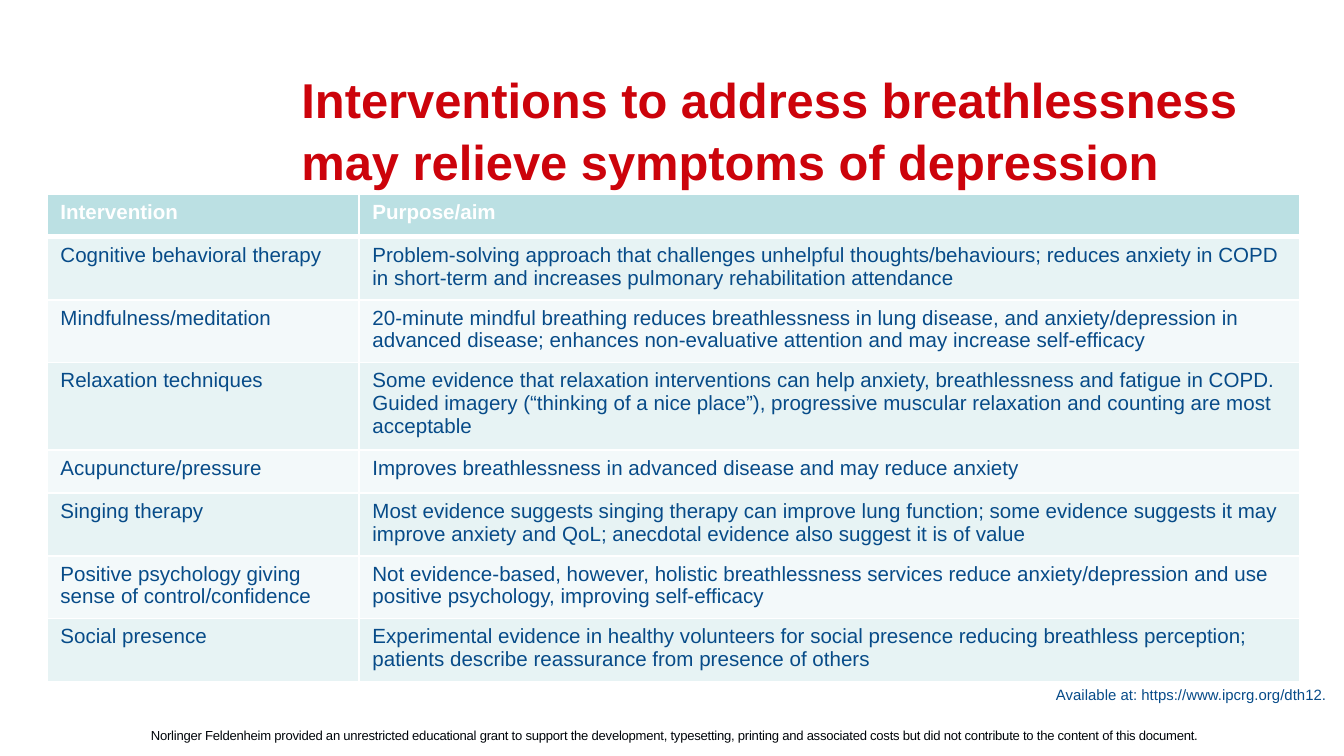
"""Build a slide listing interventions that address breathlessness."""
from dataclasses import dataclass

import lxml.etree
import pptx
import pptx.dml.color
import pptx.enum.text
import pptx.oxml.ns
import pptx.util

EMU_PER_PX = 914400 / 134.4
FONT = "Arial"
WHITE, NAVY, RED, INK = "FFFFFF", "074B88", "CC030B", "00050A"
HEADER_FILL, BAND_FILLS = "BBE0E3", ("E7F3F4", "F3F9FA")
COLUMN_WIDTHS = (312, 941)
HEADER_HEIGHT = 43


@dataclass(frozen=True)
class Frame:
    left: int
    top: int
    width: int
    height: int


@dataclass(frozen=True)
class Style:
    size: float
    colour: str
    bold: bool = False


@dataclass(frozen=True)
class Intervention:
    name: str
    aim: str
    height: int = 54


INTERVENTIONS = (
    Intervention(
        "Cognitive behavioral therapy",
        "Problem-solving approach that challenges unhelpful thoughts/behaviours; reduces anxiety "
        "in COPD in short-term and increases pulmonary rehabilitation attendance"),
    Intervention(
        "Mindfulness/meditation",
        "20-minute mindful breathing reduces breathlessness in lung disease, and anxiety/depression "
        "in advanced disease; enhances non-evaluative attention and may increase self-efficacy"),
    Intervention(
        "Relaxation techniques",
        "Some evidence that relaxation interventions can help anxiety, breathlessness and fatigue "
        "in COPD. Guided imagery (“thinking of a nice place”), progressive muscular relaxation and "
        "counting are most acceptable", 75),
    Intervention(
        "Acupuncture/pressure",
        "Improves breathlessness in advanced disease and may reduce anxiety", 43),
    Intervention(
        "Singing therapy",
        "Most evidence suggests singing therapy can improve lung function; some evidence suggests "
        "it may improve anxiety and QoL; anecdotal evidence also suggest it is of value"),
    Intervention(
        "Positive psychology giving sense of control/confidence",
        "Not evidence-based, however, holistic breathlessness services reduce anxiety/depression "
        "and use positive psychology, improving self-efficacy"),
    Intervention(
        "Social presence",
        "Experimental evidence in healthy volunteers for social presence reducing breathless "
        "perception; patients describe reassurance from presence of others"),
)


def px(length: int) -> pptx.util.Emu:
    return pptx.util.Emu(round(length * EMU_PER_PX))


def rgb(colour: str) -> pptx.dml.color.RGBColor:
    return pptx.dml.color.RGBColor.from_string(colour)


def place(shape, frame: Frame) -> None:
    shape.left, shape.top = px(frame.left), px(frame.top)
    shape.width, shape.height = px(frame.width), px(frame.height)


def write(text_frame, text: str, style: Style):
    para = text_frame.paragraphs[0]
    para.add_run().text = text
    para.font.name = FONT
    para.font.size = pptx.util.Pt(style.size)
    para.font.bold = style.bold
    para.font.color.rgb = rgb(style.colour)
    return para


def add_title(page, frame: Frame, text: str) -> None:
    title = page.shapes.title
    place(title, frame)
    title.text_frame.auto_size = pptx.enum.text.MSO_AUTO_SIZE.NONE
    title.text_frame.vertical_anchor = pptx.enum.text.MSO_ANCHOR.TOP
    para = write(title.text_frame, text, Style(26.2, RED, True))
    para.alignment = pptx.enum.text.PP_ALIGN.LEFT
    para.line_spacing = 1.05


def add_text(page, frame: Frame, text: str, style: Style):
    box = page.shapes.add_textbox(*map(px, (frame.left, frame.top, frame.width, frame.height)))
    box.text_frame.word_wrap = True
    write(box.text_frame, text, style)
    return box


def add_border(cell, side: str, points: int) -> None:
    properties = cell._tc.get_or_add_tcPr()
    qn = pptx.oxml.ns.qn
    line = lxml.etree.SubElement(properties, qn(f"a:ln{side}"), w=str(pptx.util.Pt(points)))
    fill = lxml.etree.SubElement(line, qn("a:solidFill"))
    lxml.etree.SubElement(fill, qn("a:srgbClr"), val=WHITE)


def fill_row(table, index: int, texts: tuple[str, str], style: Style, fill: str) -> None:
    for cell, text in zip(table.rows[index].cells, texts):
        write(cell.text_frame, text, style)
        for side in "LRTB":
            under_header = (index, side) in ((0, "B"), (1, "T"))
            add_border(cell, side, 3 if under_header else 1)
        cell.fill.solid()
        cell.fill.fore_color.rgb = rgb(fill)


def add_interventions(page, left: int, top: int) -> None:
    heights = [HEADER_HEIGHT] + [item.height for item in INTERVENTIONS]
    table = page.shapes.add_table(
        len(heights), len(COLUMN_WIDTHS), px(left), px(top),
        px(sum(COLUMN_WIDTHS)), px(sum(heights))).table
    for column, width in zip(table.columns, COLUMN_WIDTHS):
        column.width = px(width)
    for row, height in zip(table.rows, heights):
        row.height = px(height)
    fill_row(table, 0, ("Intervention", "Purpose/aim"), Style(11, WHITE, True), HEADER_FILL)
    for index, item in enumerate(INTERVENTIONS, 1):
        fill_row(table, index, (item.name, item.aim), Style(11, NAVY), BAND_FILLS[(index - 1) % 2])


def add_funding_note(page) -> None:
    box = add_text(
        page, Frame(149, 726, 1097, 19),
        "Norlinger Feldenheim provided an unrestricted educational grant to support the "
        "development, typesetting, printing and associated costs but did not contribute to the "
        "content of this document.", Style(7, INK))
    text_frame = box.text_frame
    text_frame.margin_left = text_frame.margin_right = text_frame.margin_bottom = 0
    text_frame.margin_top = px(1)
    para = text_frame.paragraphs[0]
    para._p.get_or_add_pPr().set("marL", str(px(2)))
    para.runs[0]._r.get_or_add_rPr().set("spc", "-10")


def main() -> None:
    deck = pptx.Presentation()
    deck.slide_width, deck.slide_height = px(1344), px(756)
    page = deck.slides.add_slide(deck.slide_layouts[5])
    add_funding_note(page)
    add_title(page, Frame(288, 60, 1056, 83),
              "Interventions to address breathlessness may relieve symptoms of depression")
    add_interventions(page, 47, 194)
    source = add_text(page, Frame(419, 679, 921, 32),
                      "Available at: https://www.ipcrg.org/dth12.", Style(8, NAVY))
    source.text_frame.paragraphs[0].alignment = pptx.enum.text.PP_ALIGN.RIGHT
    deck.save("out.pptx")


if __name__ == "__main__":
    main()
